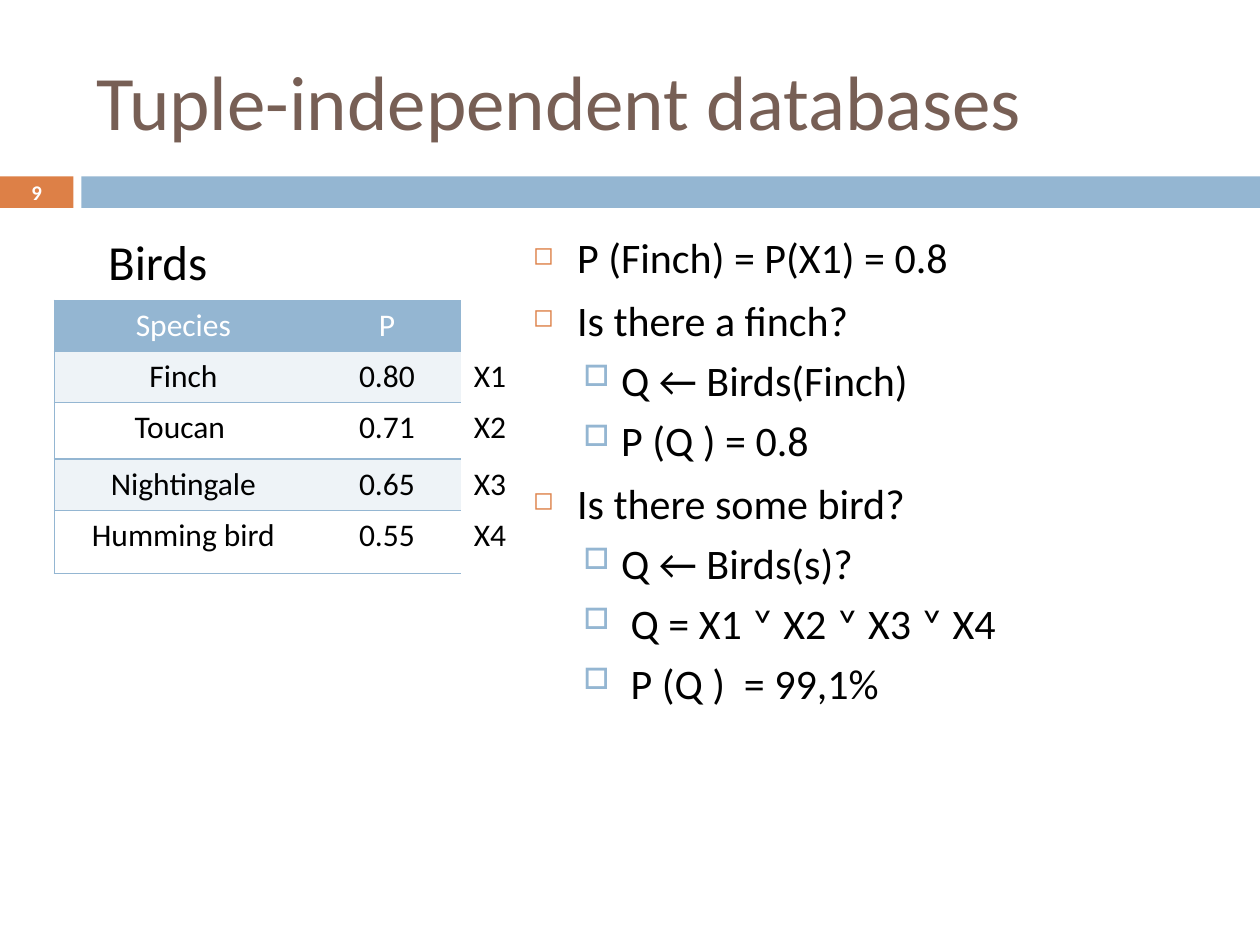
from lxml import etree
from pptx import Presentation
from pptx.dml.color import RGBColor
from pptx.enum import shapes, text
from pptx.oxml.ns import qn
from pptx.util import Pt

BLUE = RGBColor(0x94, 0xB6, 0xD2)
ORANGE = RGBColor(0xDD, 0x80, 0x47)
BROWN = RGBColor(0x77, 0x5F, 0x55)
PALE = RGBColor(0xEE, 0xF3, 0xF7)
WHITE = RGBColor(0xFF, 0xFF, 0xFF)
BLACK = RGBColor(0, 0, 0)
NO_STYLE = "{2D5ABB26-0587-4C30-8999-92F81FD0307C}"


def style(p, size, color, bold=False):
    for r in p.runs:
        r.font.name = "Calibri"
        r.font.size = Pt(size)
        r.font.bold = bold
        r.font.color.rgb = color


def add_text(box, lines, size, color, anchor=text.MSO_ANCHOR.TOP):
    tf = s.shapes.add_textbox(*map(Pt, box)).text_frame
    tf.word_wrap = True
    tf.vertical_anchor = anchor
    tf.text = "\n".join(lines)
    for p in tf.paragraphs:
        style(p, size, color)
    return tf


prs = Presentation()
prs.slide_width, prs.slide_height = Pt(720), Pt(540)
s = prs.slides.add_slide(prs.slide_layouts[6])

# Title and the band below it
for left, width, color in ((0, 42, ORANGE), (46.5, 673.5, BLUE)):
    sp = s.shapes.add_shape(shapes.MSO_SHAPE.RECTANGLE,
                            Pt(left), Pt(100.8), Pt(width), Pt(18))
    sp.shadow.inherit = False
    sp.fill.solid()
    sp.fill.fore_color.rgb = color
    sp.line.fill.background()

add_text((48, 18, 642, 78), ["Tuple-independent databases"], 44, BROWN,
         text.MSO_ANCHOR.MIDDLE)
tf = add_text((0, 100, 42, 19.5), ["9"], 11.9, WHITE, text.MSO_ANCHOR.MIDDLE)
tf.paragraphs[0].alignment = text.PP_ALIGN.CENTER
tf.paragraphs[0].runs[0].font.bold = True

# Birds table
rows = [
    ("Species", "P", ""),
    ("Finch", "0.80", "X1"),
    ("Toucan ", "0.71", "X2"),
    ("Nightingale", "0.65", "X3"),
    ("Humming bird", "0.55", "X4"),
]
col_widths = (147.6, 85, 39.6)
row_heights = (29.2, 29.2, 32.4, 29.2, 36)
table = s.shapes.add_table(len(rows), len(col_widths), Pt(31), Pt(171.6),
                           Pt(sum(col_widths)), Pt(sum(row_heights))).table
table.first_row = table.horz_banding = False
table._tbl.tblPr.find(qn("a:tableStyleId")).text = NO_STYLE
for col, width in zip(table.columns, col_widths):
    col.width = Pt(width)
for i, (row, height) in enumerate(zip(rows, row_heights)):
    table.rows[i].height = Pt(height)
    for j, value in enumerate(row):
        cell = table.cell(i, j)
        cell.text = value
        p = cell.text_frame.paragraphs[0]
        style(p, 18, BLACK if i else WHITE)
        if j == 2:
            cell.fill.background()
            continue
        p.alignment = text.PP_ALIGN.CENTER
        cell.fill.solid()
        cell.fill.fore_color.rgb = BLUE if i == 0 else PALE if i % 2 else WHITE
        sides = ("lnL", "lnT", "lnB") if j == 0 else ("lnT", "lnB")
        tcPr = cell._tc.get_or_add_tcPr()
        for k, side in enumerate(sides):
            ln = etree.Element(qn("a:" + side), w=str(Pt(1)))
            fill = etree.SubElement(ln, qn("a:solidFill"))
            etree.SubElement(fill, qn("a:srgbClr"), val=str(BLUE))
            tcPr.insert(k, ln)

add_text((54.7, 129, 193, 41), ["Birds"], 28, BLACK)

# Bulleted queries: level and wording
queries = [
    (0, "P (Finch) = P(X1) = 0.8"),
    (0, "Is there a finch?"),
    (1, "Q ← Birds(Finch)"),
    (1, "P (Q ) = 0.8"),
    (0, "Is there some bird?"),
    (1, "Q ← Birds(s)?"),
    (1, " Q = X1 ˅ X2 ˅ X3 ˅ X4"),
    (1, " P (Q )  = 99,1%"),
]
# Per level: left margin, hanging indent, space before, bullet, colour, size in %
levels = [(25.2, 25.2, 7, "◻", ORANGE, 60), (50.4, 21.6, 5.5, "□", BLUE, 70)]
tf = add_text((297.5, 129, 351, 379), [q for _, q in queries], 24, BLACK)
for p, (level, _) in zip(tf.paragraphs, queries):
    margin, hang, before, char, color, percent = levels[level]
    p.level = level
    p.space_before = Pt(before)
    pPr = p._p.get_or_add_pPr()
    pPr.set("marL", str(Pt(margin)))
    pPr.set("indent", str(-Pt(hang)))
    clr = etree.SubElement(pPr, qn("a:buClr"))
    etree.SubElement(clr, qn("a:srgbClr"), val=str(color))
    etree.SubElement(pPr, qn("a:buSzPct"), val=str(percent * 1000))
    etree.SubElement(pPr, qn("a:buChar"), char=char)

prs.save("out.pptx")
